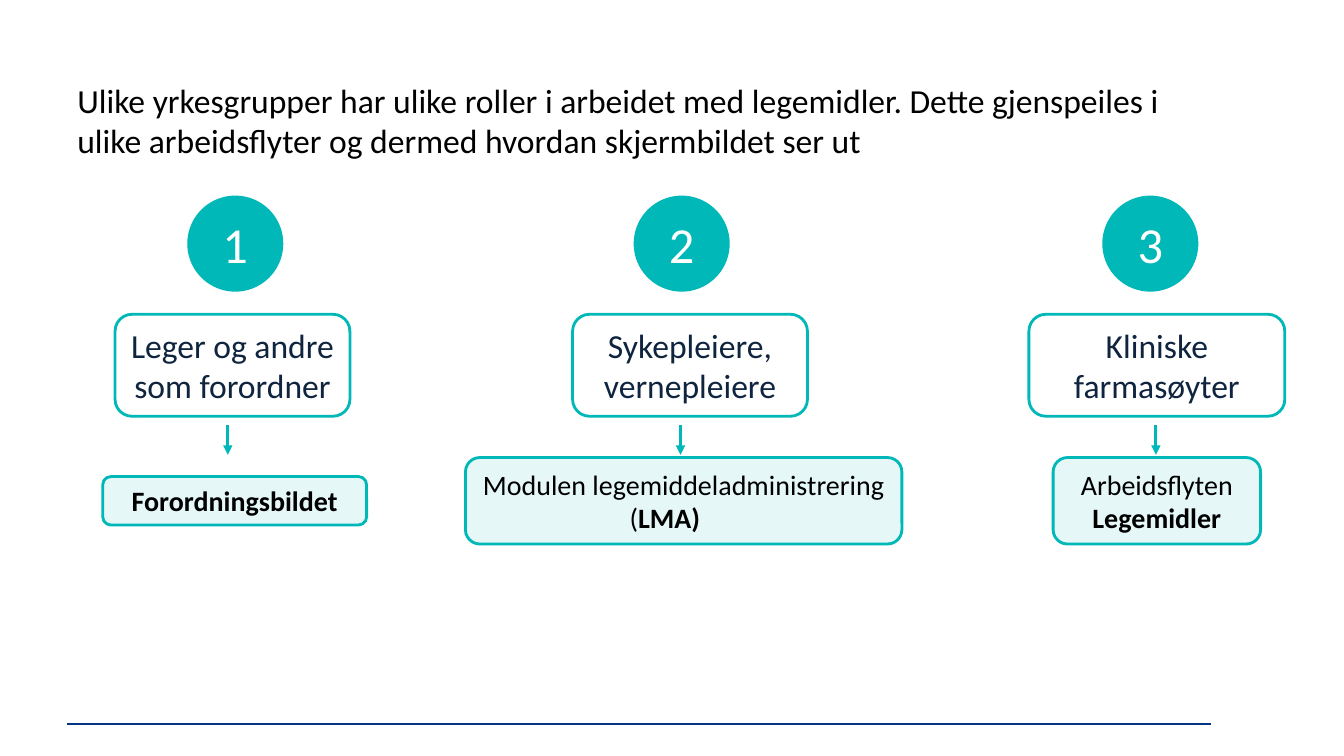
from dataclasses import dataclass

from lxml.etree import SubElement
from pptx import Presentation
from pptx.dml.color import RGBColor
from pptx.enum.shapes import MSO_CONNECTOR, MSO_SHAPE
from pptx.enum.text import MSO_ANCHOR as ANCHOR, PP_ALIGN as ALIGN
from pptx.oxml.ns import qn
from pptx.util import Cm, Pt

TEAL = RGBColor(0x00, 0xB8, 0xB7)
NAVY = RGBColor(0x0F, 0x24, 0x3E)
BLUE = RGBColor(0x04, 0x35, 0x85)
BLACK = RGBColor(0x00, 0x00, 0x00)
WHITE = RGBColor(0xFF, 0xFF, 0xFF)
FONT = "Calibri"

CIRCLE_TOP, CIRCLE_SIZE = 4.93, 2.42
ROLE_TOP, ROLE_HEIGHT = 7.92, 2.57
ARROW_TOP, ARROW_BOTTOM = 10.72, 11.46


@dataclass
class Run:
    text: str
    bold: bool = False


@dataclass
class Line:
    runs: list[Run]
    indent: float | None = None  # left-aligned at this indent; centred if None


@dataclass
class Box:
    left: float
    top: float
    width: float
    height: float


@dataclass
class Group:
    """One professional group and the view it works in (lengths in cm)."""
    circle_mid: float
    role: str
    role_left: float
    role_width: float
    arrow_x: float
    view_box: Box
    view: list[Line]


GROUPS = [
    Group(5.93, "Leger og andre som forordner", 2.9, 5.92, 5.74,
          Box(2.59, 12.01, 6.65, 1.22),
          [Line([Run("Forordningsbildet", True)])]),
    Group(17.18, "Sykepleiere, vernepleiere", 14.43, 5.92, 17.15,
          Box(11.73, 11.53, 11, 2.18),
          [Line([Run("Modulen legemiddeladministrering")]),
           Line([Run("("), Run("LMA)", True)], indent=3.78)]),
    Group(28.99, "Kliniske farmasøyter", 25.93, 6.45, 29.13,
          Box(26.54, 11.53, 5.23, 2.18),
          [Line([Run("Arbeidsflyten "), Run("Legemidler", True)])]),
]


def write(sp, lines: list[Line], size: int, color: RGBColor) -> None:
    tf = sp.text_frame
    tf.word_wrap = True
    tf.vertical_anchor = ANCHOR.MIDDLE
    for i, line in enumerate(lines):
        p = tf.add_paragraph() if i else tf.paragraphs[0]
        p.alignment = ALIGN.CENTER if line.indent is None else ALIGN.LEFT
        if line.indent:
            p._p.get_or_add_pPr().set("marL", str(Cm(line.indent)))
        p.font.name, p.font.size = FONT, Pt(size)
        p.font.color.rgb = color
        for run in line.runs:
            r = p.add_run()
            r.text = run.text
            if run.bold:
                r.font.bold = True


def add_shape(slide, kind: MSO_SHAPE, box: Box, fill: RGBColor,
              outline: bool = True, opacity: int = 100):
    sp = slide.shapes.add_shape(kind, Cm(box.left), Cm(box.top),
                                Cm(box.width), Cm(box.height))
    sp.shadow.inherit = False
    sp.fill.solid()
    sp.fill.fore_color.rgb = fill
    if opacity < 100:
        clr = sp._element.spPr.find(qn("a:solidFill"))[0]
        SubElement(clr, qn("a:alpha"), val=str(opacity * 1000))
    if outline:
        sp.line.color.rgb, sp.line.width = TEAL, Pt(2)
    else:
        sp.line.fill.background()
    return sp


def add_line(slide, x1: float, y1: float, x2: float, y2: float,
             color: RGBColor, width: float, arrow: bool = False) -> None:
    cxn = slide.shapes.add_connector(MSO_CONNECTOR.STRAIGHT,
                                     Cm(x1), Cm(y1), Cm(x2), Cm(y2))
    cxn.line.color.rgb, cxn.line.width = color, Pt(width)
    if arrow:
        SubElement(cxn.line._get_or_add_ln(), qn("a:tailEnd"), type="triangle")
    SubElement(cxn._element.spPr, qn("a:effectLst"))


def add_group(slide, number: int, group: Group) -> None:
    # Numbered circle
    circle = add_shape(slide, MSO_SHAPE.OVAL,
                       Box(group.circle_mid - CIRCLE_SIZE / 2, CIRCLE_TOP,
                           CIRCLE_SIZE, CIRCLE_SIZE), TEAL, outline=False)
    tf = circle.text_frame
    tf.margin_left = tf.margin_right = tf.margin_top = tf.margin_bottom = 0
    write(circle, [Line([Run(str(number))])], 36, WHITE)

    # Role, arrow and view
    role = add_shape(slide, MSO_SHAPE.ROUNDED_RECTANGLE,
                     Box(group.role_left, ROLE_TOP, group.role_width,
                         ROLE_HEIGHT), WHITE)
    write(role, [Line([Run(group.role)])], 24, NAVY)
    add_line(slide, group.arrow_x, ARROW_TOP, group.arrow_x, ARROW_BOTTOM,
             TEAL, 2.25, arrow=True)
    view = add_shape(slide, MSO_SHAPE.ROUNDED_RECTANGLE, group.view_box, TEAL,
                     opacity=10)
    write(view, group.view, 20, BLACK)


def main() -> None:
    prs = Presentation()
    prs.slide_width, prs.slide_height = Cm(33.87), Cm(19.05)
    slide = prs.slides.add_slide(prs.slide_layouts[6])

    # Footer rule
    add_line(slide, 1.7, 18.24, 30.53, 18.24, BLUE, 1.25)

    # Heading
    heading = slide.shapes.add_textbox(Cm(1.7), Cm(2.03), Cm(28.04), Cm(1.98))
    text = ("Ulike yrkesgrupper har ulike roller i arbeidet med legemidler. "
            "Dette gjenspeiles i ulike arbeidsflyter og dermed hvordan "
            "skjermbildet ser ut")
    write(heading, [Line([Run(text)], indent=0)], 24, BLACK)

    # Professional groups
    for number, group in enumerate(GROUPS, 1):
        add_group(slide, number, group)

    prs.save("out.pptx")


if __name__ == "__main__":
    main()
